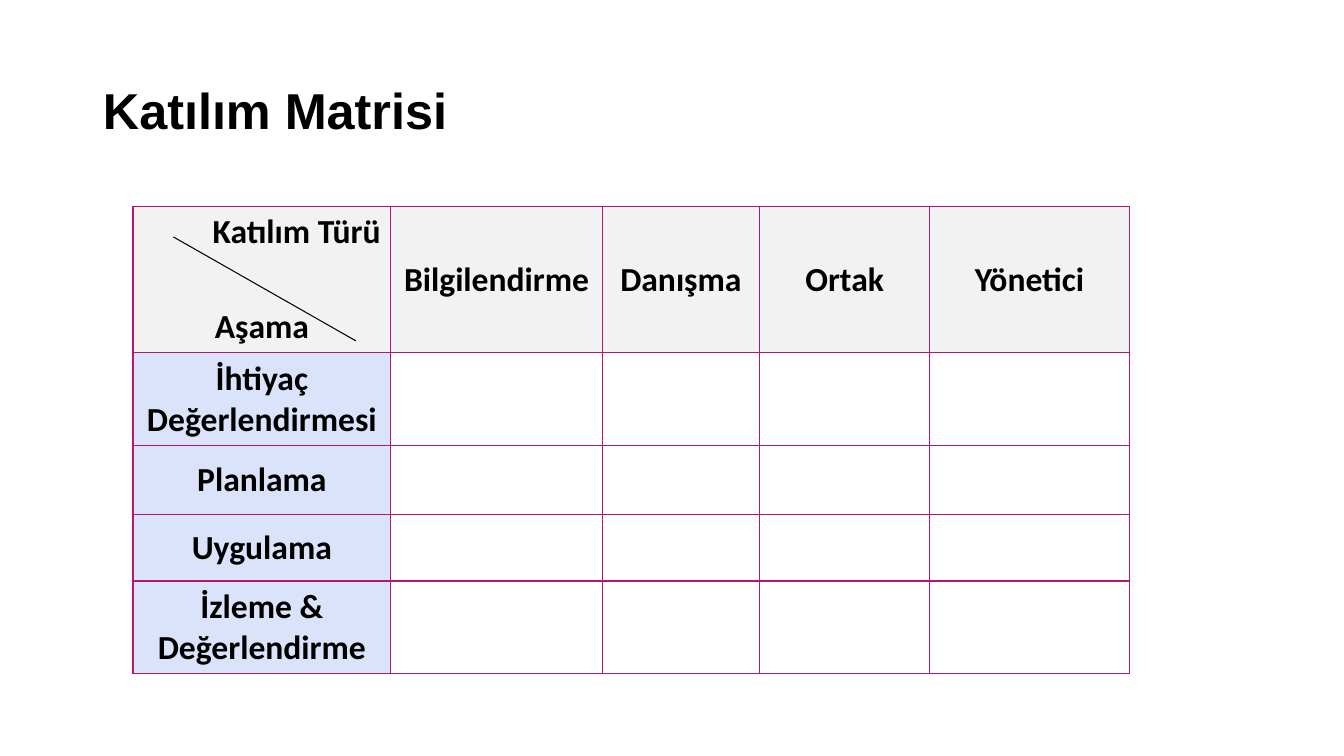
from lxml import etree
from pptx import Presentation
from pptx.dml.color import RGBColor
from pptx.enum.shapes import MSO_CONNECTOR
from pptx.enum.text import MSO_ANCHOR, PP_ALIGN
from pptx.oxml.ns import qn
from pptx.util import Cm, Pt

STRAIGHT = MSO_CONNECTOR.STRAIGHT
TOP, MIDDLE = MSO_ANCHOR.TOP, MSO_ANCHOR.MIDDLE
LEFT, CENTER, RIGHT = PP_ALIGN.LEFT, PP_ALIGN.CENTER, PP_ALIGN.RIGHT

COLORS = {"text": "000000", "header": "F2F2F2", "stage": "DAE3FA", "border": "B4186E"}
COLUMN_WIDTHS = [6.5, 5.33, 3.96, 4.29, 5.03]
ROW_HEIGHTS = [3.68, 2.34, 1.73, 1.68, 2.34]
TYPES = ["Bilgilendirme", "Danışma", "Ortak", "Yönetici"]
STAGES = ["İhtiyaç Değerlendirmesi", "Planlama", "Uygulama", "İzleme & Değerlendirme"]


def color(name):
    return RGBColor.from_string(COLORS[name])


class MatrixSlide:
    """Holds the text style and the slide that receives the elements."""

    title_font, table_font = "Arial", "Calibri"
    title_size, table_size = 36, 24

    def __init__(self, deck):
        self.page = deck.slides.add_slide(deck.slide_layouts[5])

    def add_text(self, para, text, font, size, align):
        para.alignment = align
        span = para.add_run()
        span.text = text
        span.font.name = font
        span.font.size = Pt(size)
        span.font.bold = True
        span.font.color.rgb = color("text")

    def title(self, text, left, top, width, height):
        box = self.page.shapes.title
        box.left, box.top, box.width, box.height = Cm(left), Cm(top), Cm(width), Cm(height)
        box.text_frame.vertical_anchor = MIDDLE
        para = box.text_frame.paragraphs[0]
        para.line_spacing = 0.9
        self.add_text(para, text, self.title_font, self.title_size, LEFT)

    def table(self, left, top, widths, heights):
        frame = self.page.shapes.add_table(
            len(heights), len(widths), Cm(left), Cm(top), Cm(sum(widths)), Cm(sum(heights)))
        table = frame.table
        table.horz_banding = False
        for column, width in zip(table.columns, widths):
            column.width = Cm(width)
        for row, height in zip(table.rows, heights):
            row.height = Cm(height)
        for cell in table.iter_cells():
            self.border(cell)
            cell.fill.background()
        return table

    def border(self, cell):
        properties = cell._tc.get_or_add_tcPr()
        for side in ("a:lnL", "a:lnR", "a:lnT", "a:lnB"):
            line = etree.SubElement(properties, qn(side), w=str(Pt(1)))
            fill = etree.SubElement(line, qn("a:solidFill"))
            etree.SubElement(fill, qn("a:srgbClr"), val=COLORS["border"])

    def label(self, cell, text, fill):
        self.shade(cell, fill, MIDDLE)
        para = cell.text_frame.paragraphs[0]
        self.add_text(para, text, self.table_font, self.table_size, CENTER)

    def corner(self, cell, type_heading, stage_heading):
        self.shade(cell, "header", TOP)
        first = cell.text_frame.paragraphs[0]
        self.add_text(first, type_heading, self.table_font, self.table_size, RIGHT)
        second = cell.text_frame.add_paragraph()
        second.space_before = Pt(38.5)
        self.add_text(second, stage_heading, self.table_font, self.table_size, CENTER)

    def shade(self, cell, fill, anchor):
        cell.fill.solid()
        cell.fill.fore_color.rgb = color(fill)
        cell.vertical_anchor = anchor

    def line(self, start_x, start_y, end_x, end_y):
        line = self.page.shapes.add_connector(
            STRAIGHT, Cm(start_x), Cm(start_y), Cm(end_x), Cm(end_y))
        line.line.color.rgb = color("text")
        line.line.width = Pt(0.75)
        etree.SubElement(line._element.spPr, qn("a:effectLst"))


def main():
    deck = Presentation()
    deck.slide_width, deck.slide_height = Cm(33.87), Cm(19.05)
    matrix = MatrixSlide(deck)
    matrix.title("Katılım Matrisi", 2.34, 1.02, 29.21, 3.68)
    table = matrix.table(3.35, 5.21, COLUMN_WIDTHS, ROW_HEIGHTS)
    matrix.corner(table.cell(0, 0), "Katılım Türü", "Aşama")
    for column, name in enumerate(TYPES, 1):
        matrix.label(table.cell(0, column), name, "header")
    for row, name in enumerate(STAGES, 1):
        matrix.label(table.cell(row, 0), name, "stage")
    matrix.line(4.37, 5.97, 8.97, 8.59)
    deck.save("out.pptx")


if __name__ == "__main__":
    main()
